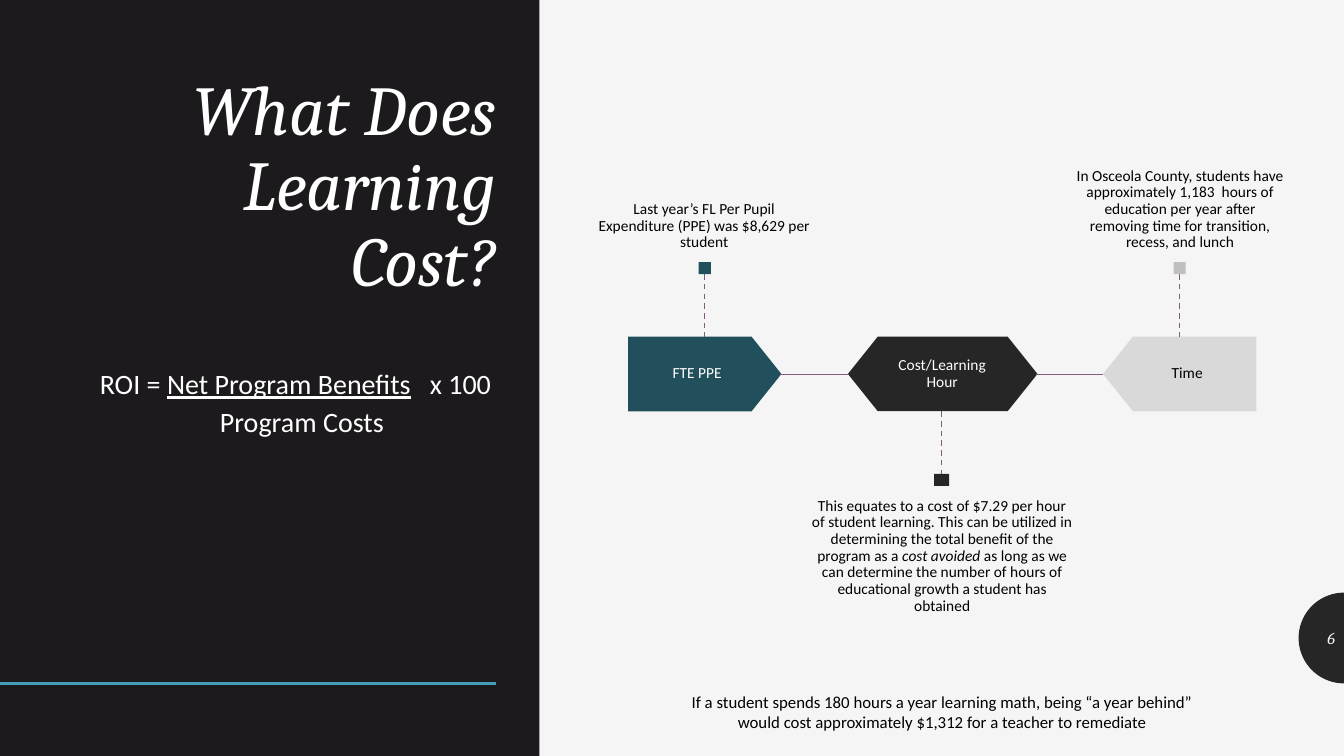
import math

import pptx
import pptx.dml.color
import pptx.enum.dml
import pptx.enum.shapes
import pptx.enum.text
import pptx.oxml
import pptx.oxml.ns
import pptx.util

Inches = pptx.util.Inches
Pt = pptx.util.Pt
RGBColor = pptx.dml.color.RGBColor
SHAPE = pptx.enum.shapes.MSO_SHAPE
ALIGN = pptx.enum.text.PP_ALIGN
ANCHOR = pptx.enum.text.MSO_ANCHOR

PAPER = RGBColor(0xF5, 0xF5, 0xF5)
PANEL = RGBColor(0x1D, 0x1A, 0x1D)
CHARCOAL = RGBColor(0x26, 0x26, 0x26)
RULE_BLUE = RGBColor(0x43, 0x9E, 0xB7)
TEAL = RGBColor(0x22, 0x4F, 0x5C)
LIGHT_GRAY = RGBColor(0xD9, 0xD9, 0xD9)
MID_GRAY = RGBColor(0xBF, 0xBF, 0xBF)
PURPLE = RGBColor(0x83, 0x5B, 0x82)
WHITE = RGBColor(0xFF, 0xFF, 0xFF)
BLACK = RGBColor(0, 0, 0)

CHAIN_TOP, CHAIN_HEIGHT = 3.34, 0.74
CHAIN_MIDDLE = CHAIN_TOP + CHAIN_HEIGHT / 2
MARKER_HEIGHT = 0.12


def paint(sp, color):
    sp.shadow.inherit = False
    sp.fill.solid()
    sp.fill.fore_color.rgb = color
    sp.line.fill.background()


def add_block(s, kind, left, top, width, height, color, adjust=None):
    sp = s.shapes.add_shape(kind, Inches(left), Inches(top),
                            Inches(width), Inches(height))
    paint(sp, color)
    if adjust is not None:
        sp.adjustments[0] = adjust
    return sp


def add_line(s, x1, y1, x2, y2, color, width, dashed=False):
    line = s.shapes.add_connector(
        pptx.enum.shapes.MSO_CONNECTOR.STRAIGHT,
        Inches(x1), Inches(y1), Inches(x2), Inches(y2))
    line.line.color.rgb = color
    line.line.width = Pt(width)
    if dashed:
        line.line.dash_style = pptx.enum.dml.MSO_LINE.DASH
    effects = pptx.oxml.parse_xml(
        "<a:effectLst %s/>" % pptx.oxml.ns.nsdecls("a"))
    line._element.spPr.append(effects)


def add_text(s, left, top, width, height, paragraphs, size, color,
             font="Calibri", italic=False, align=ALIGN.CENTER,
             anchor=ANCHOR.TOP, spacing=1.0, insets=(0.1, 0.05)):
    """Add a text box; each paragraph is a list of run texts."""
    box = s.shapes.add_textbox(Inches(left), Inches(top),
                               Inches(width), Inches(height))
    tf = box.text_frame
    tf.word_wrap = True
    tf.vertical_anchor = anchor
    tf.margin_left = tf.margin_right = Inches(insets[0])
    tf.margin_top = tf.margin_bottom = Inches(insets[1])
    for i, texts in enumerate(paragraphs):
        p = tf.add_paragraph() if i else tf.paragraphs[0]
        p.alignment = align
        p.line_spacing = spacing
        for text in texts:
            r = p.add_run()
            r.text = text
            r.font.name = font
            r.font.size = Pt(size)
            r.font.italic = italic
            r.font.color.rgb = color
    return tf


def add_label(s, left, top, width, height, text, color):
    add_text(s, left, top, width, height, [[text]], 11, color,
             anchor=ANCHOR.MIDDLE, spacing=0.9, insets=(0.09, 0.09))


def add_note(s, left, top, width, texts, anchor):
    return add_text(s, left, top, width, 1.98, [texts], 11, BLACK,
                    anchor=anchor, spacing=0.9, insets=(0, 0.11))


def add_marker(s, center, top, width, color):
    """Add a small square and the dashed line joining it to the chain."""
    if top < CHAIN_TOP:
        start, end = top + MARKER_HEIGHT, CHAIN_TOP
    else:
        start, end = CHAIN_TOP + CHAIN_HEIGHT, top
    add_line(s, center, start, center, end, PURPLE, 1, dashed=True)
    add_block(s, SHAPE.RECTANGLE, center - width / 2, top,
              width, MARKER_HEIGHT, color)


def add_half_disc(s, x, y, radius, color):
    """Add the left half of a disc centred at x, y."""
    steps = 48
    points = []
    for i in range(steps + 1):
        angle = math.pi * (0.5 + i / steps)
        points.append((Inches(x + radius * math.cos(angle)),
                       Inches(y + radius * math.sin(angle))))
    builder = s.shapes.build_freeform(*points[0])
    builder.add_line_segments(points[1:], close=True)
    paint(builder.convert_to_shape(), color)


def add_left_panel(s):
    add_block(s, SHAPE.RECTANGLE, 0, 0, 5.35, 7.5, PANEL)
    add_line(s, 0, 6.78, 4.92, 6.78, RULE_BLUE, 2)
    add_text(s, 0.83, 0.61, 4.19, 2.43, [["What Does Learning Cost?"]],
             50, WHITE, font="Cambria", italic=True, align=ALIGN.RIGHT,
             anchor=ANCHOR.BOTTOM, spacing=0.9)
    formula = add_text(
        s, 0.83, 3.55, 4.2, 2.74,
        [["ROI = ", "Net Program Benefits", " ", "x 100"],
         ["Program Costs"]], 20, WHITE, spacing=1.12)
    ratio, divisor = formula.paragraphs
    ratio.runs[1].font.underline = True
    ratio.runs[2].font._element.set("spc", "900")
    divisor._p.get_or_add_pPr().set("marL", str(Inches(0.13)))


def add_chain(s):
    add_block(s, SHAPE.PENTAGON, 6.23, CHAIN_TOP, 1.52, CHAIN_HEIGHT,
              TEAL, 0.4)
    add_block(s, SHAPE.HEXAGON, 8.41, CHAIN_TOP, 1.88, CHAIN_HEIGHT,
              CHARCOAL, 0.4)
    time = add_block(s, SHAPE.PENTAGON, 10.94, CHAIN_TOP, 1.52,
                     CHAIN_HEIGHT, LIGHT_GRAY, 0.4)
    time.rotation = 180
    for x1, x2 in ((7.74, 8.41), (10.28, 10.94)):
        add_line(s, x1, CHAIN_MIDDLE, x2, CHAIN_MIDDLE, PURPLE, 0.5)

    add_label(s, 6.23, CHAIN_TOP, 1.37, CHAIN_HEIGHT, "FTE PPE", WHITE)
    add_label(s, 8.66, 3.44, 1.37, 0.54, "Cost/Learning Hour", WHITE)
    add_label(s, 11.09, CHAIN_TOP, 1.37, CHAIN_HEIGHT, "Time", BLACK)

    add_marker(s, 6.99, 2.6, 0.12, TEAL)
    add_marker(s, 9.34, 4.7, 0.15, CHARCOAL)
    add_marker(s, 11.7, 2.6, 0.12, MID_GRAY)

    add_note(s, 5.93, 0.62, 2.11,
             ["Last year’s FL Per Pupil Expenditure (PPE) was $8,629 "
              "per student"], ANCHOR.BOTTOM)
    cost = add_note(
        s, 8.04, 4.83, 2.61,
        ["This equates to a cost of $7.29 per hour of student learning. "
         "This can be utilized in determining the total benefit of the "
         "program as a ", "cost avoided",
         " as long as we can determine the number of hours of "
         "educational growth a student has obtained"], ANCHOR.TOP)
    cost.paragraphs[0].runs[1].font.italic = True
    add_note(s, 10.65, 0.62, 2.11,
             ["In Osceola County, students have approximately 1,183  hours "
              "of education per year after removing time for transition, "
              "recess, and lunch"], ANCHOR.BOTTOM)


def main():
    prs = pptx.Presentation()
    prs.slide_width = Inches(13.33)
    prs.slide_height = Inches(7.5)
    s = prs.slides.add_slide(prs.slide_layouts[6])
    s.background.fill.solid()
    s.background.fill.fore_color.rgb = PAPER

    add_half_disc(s, 13.33, 6.33, 0.45, CHARCOAL)
    add_left_panel(s)
    add_chain(s)
    add_text(s, 12.89, 6.13, 0.45, 0.4, [["6"]], 12, PAPER,
             font="Cambria", italic=True, align=ALIGN.RIGHT,
             anchor=ANCHOR.MIDDLE)
    add_text(s, 6.69, 6.81, 5.31, 0.5,
             [["If a student spends 180 hours a year learning math, being "
               "“a year behind” would cost approximately $1,312 for a "
               "teacher to remediate"]], 12, BLACK)
    prs.save("out.pptx")


if __name__ == "__main__":
    main()
